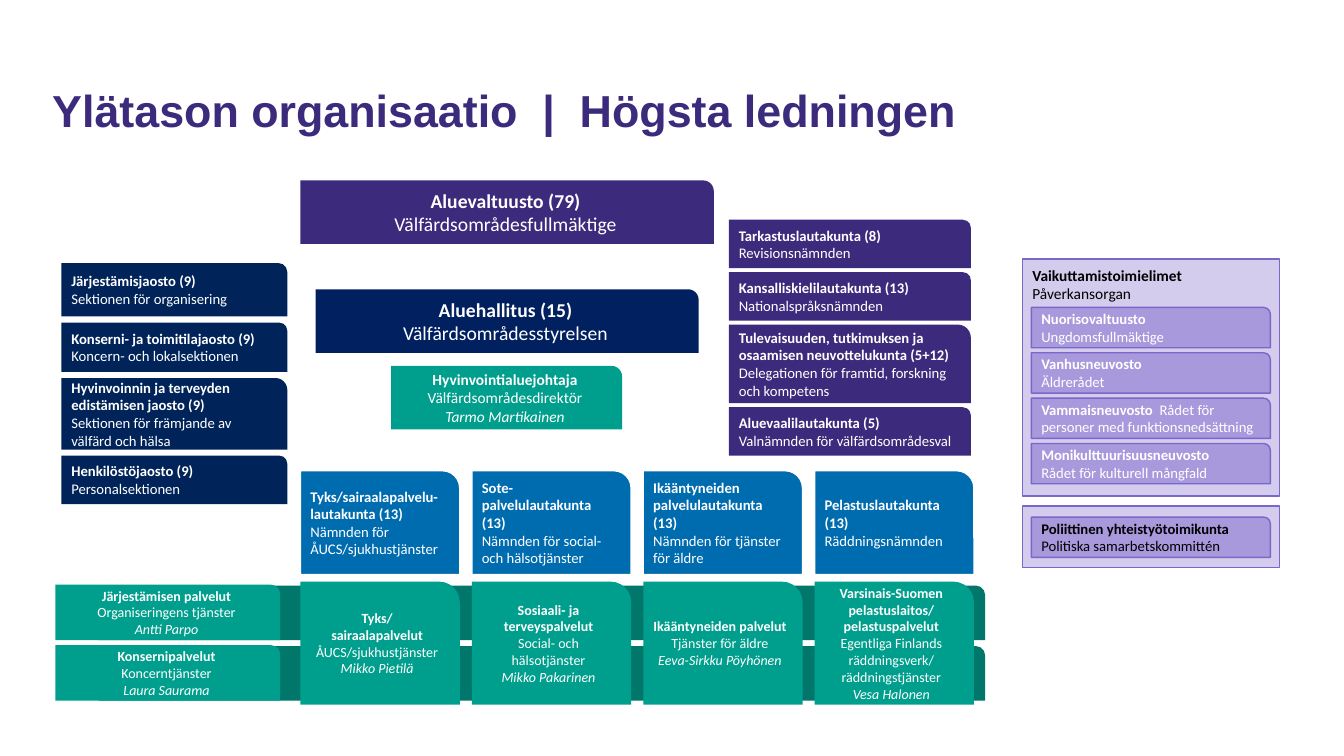
from pptx import Presentation
from pptx.dml.color import RGBColor
from pptx.enum.shapes import MSO_SHAPE as Shape
from pptx.enum.text import MSO_ANCHOR as Anchor, PP_ALIGN as Align
from pptx.util import Pt

PX = 9144
COLORS = {
    "white": "FFFFFF", "black": "000000", "purple": "3C2B7C", "navy": "002459",
    "board_navy": "002060", "blue": "006CB0", "teal": "009F8D", "band": "00776A",
    "lilac": "D3CCED", "violet": "A799DC", "outline": "7B66CA",
}

SECTIONS = [
    (53, ("Järjestämisjaosto (9)", "Sektionen för organisering")),
    (49, ("Konserni- ja toimitilajaosto (9)", "Koncern- och lokalsektionen")),
    (71, ("Hyvinvoinnin ja terveyden edistämisen jaosto (9)",
          "Sektionen för främjande av välfärd och hälsa")),
    (48, ("Henkilöstöjaosto (9)", "Personalsektionen")),
]
COMMITTEES = [
    (48, ("Tarkastuslautakunta (8)", "Revisionsnämnden")),
    (48, ("Kansalliskielilautakunta (13)", "Nationalspråksnämnden")),
    (78, ("Tulevaisuuden, tutkimuksen ja osaamisen neuvottelukunta (5+12)",
          "Delegationen för framtid, forskning och kompetens")),
    (48, ("Aluevaalilautakunta (5)", "Valnämnden för välfärdsområdesval")),
]
COUNCILS = [
    ("Nuorisovaltuusto", "Ungdomsfullmäktige"),
    ("Vanhusneuvosto", "Äldrerådet"),
    ("Vammaisneuvosto  ", "Rådet för personer med funktionsnedsättning"),
    ("Monikulttuurisuusneuvosto", "Rådet för kulturell mångfald"),
]
BOARDS = [
    ("Tyks/sairaalapalvelu-lautakunta (13)", "Nämnden för ÅUCS/sjukhustjänster"),
    ("Sote-palvelulautakunta (13)", "Nämnden för social- och hälsotjänster"),
    ("Ikääntyneiden palvelulautakunta (13)", "Nämnden för tjänster för äldre"),
    ("Pelastuslautakunta (13)", "Räddningsnämnden"),
]
SERVICES = [
    ("Tyks/\vsairaalapalvelut", "ÅUCS/sjukhustjänster", "Mikko Pietilä"),
    ("Sosiaali- ja terveyspalvelut", "Social- och hälsotjänster", "Mikko Pakarinen"),
    ("Ikääntyneiden palvelut", "Tjänster för äldre", "Eeva-Sirkku Pöyhönen"),
    ("Varsinais-Suomen pelastuslaitos/\vpelastuspalvelut",
     "Egentliga Finlands räddningsverk/\vräddningstjänster", "Vesa Halonen"),
]
GROUP_SERVICES = [
    ("Järjestämisen palvelut", "Organiseringens tjänster", "Antti Parpo"),
    ("Konsernipalvelut", "Koncerntjänster", "Laura Saurama"),
]


def color(name):
    """Return the named colour."""
    return RGBColor.from_string(COLORS[name])


def write(shape, parts, size, ink="white", align=Align.LEFT, anchor=Anchor.MIDDLE, font="Calibri"):
    """Write a bold name, a plain translation and an italic person into a shape."""
    frame = shape.text_frame
    frame.word_wrap = True
    frame.vertical_anchor = anchor
    para = None
    for index, text in enumerate(parts):
        if para is not None and parts[index - 1].endswith("  "):
            para.add_run().text = text
            spans = para.runs[-1:]
        else:
            para = frame.add_paragraph() if index else frame.paragraphs[0]
            para.text = text
            para.alignment = align
            spans = para.runs
        for span in spans:
            span.font.name = font
            span.font.size = Pt(size)
            span.font.bold = index == 0
            span.font.italic = index == 2
            span.font.color.rgb = color(ink)


def add_box(page, box, fill, line=None, kind=Shape.ROUND_1_RECTANGLE):
    """Draw a filled shape with an optional outline."""
    shape = page.shapes.add_shape(kind, *(value * PX for value in box))
    shape.shadow.inherit = False
    shape.fill.solid()
    shape.fill.fore_color.rgb = color(fill)
    if line:
        shape.line.color.rgb = color(line)
        shape.line.width = Pt(1)
    else:
        shape.line.fill.background()
    return shape


def add_label(page, box, parts, size, font="Calibri", ink="black", anchor=Anchor.TOP):
    """Place text without a background."""
    label = page.shapes.add_textbox(*(value * PX for value in box))
    write(label, parts, size, ink, anchor=anchor, font=font)


def add_stack(page, box, items, gap, fill):
    """Stack boxes of given heights downwards with equal gaps."""
    left, top, width = box
    for height, parts in items:
        write(add_box(page, (left, top, width, height), fill), parts, 10.5)
        top += height + gap


def add_leadership(page, box):
    """Draw the council, the board and the director on one centre line."""
    left, top, width = box
    levels = [
        (0, 410, "purple", 14, ("Aluevaltuusto (79)", "Välfärdsområdesfullmäktige")),
        (108, 380, "board_navy", 14, ("Aluehallitus (15)", "Välfärdsområdesstyrelsen")),
        (184, 229, "teal", 11,
         ("Hyvinvointialuejohtaja", "Välfärdsområdesdirektör", "Tarmo Martikainen")),
    ]
    for offset, level_width, fill, size, parts in levels:
        place = (left + (width - level_width) // 2, top + offset, level_width, 63)
        write(add_box(page, place, fill), parts, size, align=Align.CENTER)


def add_services(page, box):
    """Draw the group services on their bands, then the boards and their services."""
    left, top, width = box
    for row, parts in enumerate(GROUP_SERVICES):
        y = top + 113 + 60 * row
        add_box(page, (left + 43, y + 1, width - 43, 54), "band")
        lead = add_box(page, (left, y, 223, 55), "teal")
        write(lead, parts, 10, align=Align.CENTER)
    for column, (board, service) in enumerate(zip(BOARDS, SERVICES)):
        x = left + 243 + 170 * column
        write(add_box(page, (x, top, 158, 103), "blue", "white"), board, 10.5)
        unit = add_box(page, (x, top + 110, 158, 122), "teal")
        write(unit, service, 10, align=Align.CENTER)


def add_influence(page, box):
    """Draw the panels of influence bodies and political cooperation."""
    left, top, width = box
    add_box(page, (left, top, width, 235), "lilac", "outline", Shape.RECTANGLE)
    add_label(page, (left, top + 2, 233, 47), ("Vaikuttamistoimielimet", "Påverkansorgan"), 11)
    add_box(page, (left, top + 245, width, 61), "lilac", "outline", Shape.RECTANGLE)
    bodies = [(48 + 45 * row, "white", parts) for row, parts in enumerate(COUNCILS)]
    bodies.append((256, "black",
                   ("Poliittinen yhteistyötoimikunta", "Politiska samarbetskommittén")))
    for offset, ink, parts in bodies:
        body = add_box(page, (left + 9, top + offset, 237, 40), "violet", "outline")
        write(body, parts, 10.5, ink)


def main():
    """Build and save the organisation slide."""
    deck = Presentation()
    deck.slide_width, deck.slide_height = 1333 * PX, 750 * PX
    page = deck.slides.add_slide(deck.slide_layouts[6])
    add_label(page, (42, 50, 1254, 118), ("Ylätason organisaatio  |  Högsta ledningen",),
              32, "Arial", "purple", Anchor.MIDDLE)
    add_leadership(page, (298, 179, 410))
    add_stack(page, (61, 261, 224), SECTIONS, 6, "navy")
    add_stack(page, (723, 218, 240), COMMITTEES, 4, "purple")
    add_services(page, (55, 467, 922))
    add_influence(page, (1014, 257, 255))
    deck.save("out.pptx")


if __name__ == "__main__":
    main()
